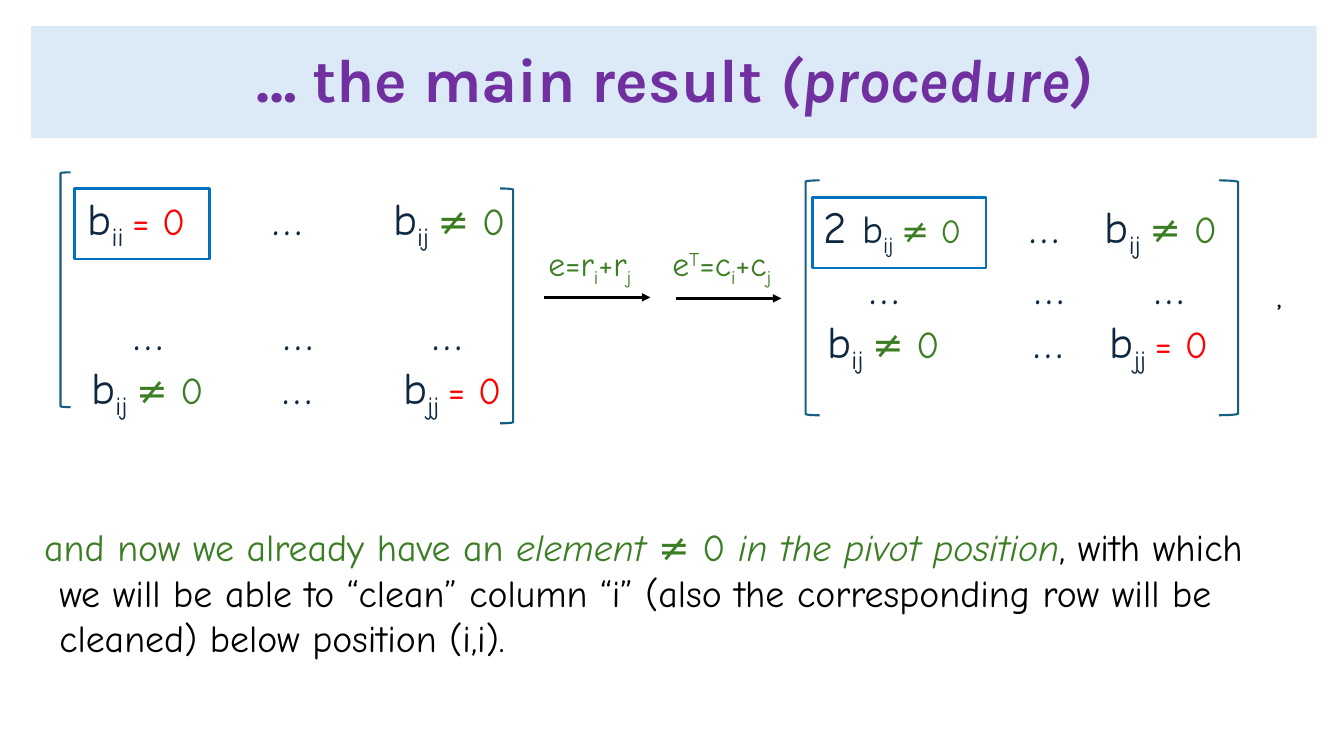
from lxml import etree
from pptx import Presentation
from pptx import util as u
from pptx.dml.color import RGBColor
from pptx.enum import shapes, text
from pptx.oxml import ns

EMU_PER_PX = 9144  # 100 px to the inch

BLACK = RGBColor(0x00, 0x00, 0x00)
PALE_BLUE = RGBColor(0xDC, 0xEA, 0xF7)
PURPLE = RGBColor(0x70, 0x30, 0xA0)
BLUE = RGBColor(0x00, 0x70, 0xC0)
TEAL = RGBColor(0x15, 0x60, 0x82)
NAVY = RGBColor(0x0E, 0x28, 0x41)
RED = RGBColor(0xFF, 0x00, 0x00)
GREEN = RGBColor(0x3B, 0x7D, 0x23)

HAND = "Comic Neue"
TITLE = "Karla"
SUB, SUPER = -25000, 30000
PARA_KEYS = ("alignment", "line_spacing", "space_before")


def px(value):
    return u.Emu(value * EMU_PER_PX)


def add_xml(parent, tag, **attributes):
    return etree.SubElement(parent, ns.qn(tag), attributes)


def run(words, size, color, base=0, name=HAND, **flags):
    """Describe one run of text as a dict of format values."""
    return dict(words=words, color=color, base=base,
                font=dict(size=u.Pt(size), name=name, **flags))


def entry(sub, relation, color, size=32, tail_size=27):
    """Describe a matrix entry: b with its index, then how it relates to 0."""
    return [run("b", size, NAVY), run(sub + " ", size, NAVY, SUB),
            run(relation + " 0", tail_size, color)]


def write_para(para, runs, tabs=(), indent=0, **layout):
    for key, value in layout.items():
        setattr(para, key, value)
    props = para._p.get_or_add_pPr()
    if indent:
        props.set("marL", str(px(indent)))
        props.set("indent", "0")
    if tabs:
        stops = add_xml(props, "a:tabLst")
        for stop in tabs:
            add_xml(stops, "a:tab", pos=str(px(stop)), algn="l")
    for item in runs:
        span = para.add_run()
        span.text = item["words"]
        for key, value in item["font"].items():
            setattr(span.font, key, value)
        span.font.color.rgb = item["color"]
        if item["base"]:
            span._r.get_or_add_rPr().set("baseline", str(item["base"]))


def add_text(page, left, top, width, height, paras, wrap=True):
    box = page.shapes.add_textbox(*map(px, (left, top, width, height)))
    frame = box.text_frame
    frame.word_wrap = wrap
    frame.auto_size = text.MSO_AUTO_SIZE.SHAPE_TO_FIT_TEXT
    for index, content in enumerate(paras):
        para = frame.add_paragraph() if index else frame.paragraphs[0]
        write_para(para, **content)


def add_outline(page, kind, color, width, *place):
    shape = page.shapes.add_shape(kind, *map(px, place))
    shape.shadow.inherit = False
    shape.fill.background()
    shape.line.color.rgb = color
    shape.line.width = u.Pt(width)


def add_brackets(page, left, right):
    for kind, place in ((shapes.MSO_SHAPE.LEFT_BRACKET, left),
                        (shapes.MSO_SHAPE.RIGHT_BRACKET, right)):
        add_outline(page, kind, TEAL, 1.5, *place)


def add_arrow(page, left, top, length):
    arrow = page.shapes.add_connector(
        shapes.MSO_CONNECTOR.STRAIGHT, *map(px, (left, top, left + length, top)))
    arrow.line.color.rgb = BLACK
    arrow.line.width = u.Pt(2)
    add_xml(arrow.line._get_or_add_ln(), "a:tailEnd", type="triangle")
    add_xml(arrow._element.spPr, "a:effectLst")


def add_title(page):
    banner = page.shapes.add_shape(
        shapes.MSO_SHAPE.RECTANGLE, *map(px, (31, 26, 1275, 111)))
    banner.shadow.inherit = False
    banner.fill.solid()
    banner.fill.fore_color.rgb = PALE_BLUE
    banner.line.fill.background()
    banner.text_frame.vertical_anchor = text.MSO_ANCHOR.MIDDLE
    write_para(banner.text_frame.paragraphs[0],
               [run("… the main result ", 44, PURPLE, name=TITLE, bold=True),
                run("(procedure)", 44, PURPLE, name=TITLE, bold=True, italic=True)],
               alignment=text.PP_ALIGN.CENTER, line_spacing=0.9)


def add_matrix(page, place, pivot, tabs, corner, gap=0):
    """Write the three rows; tabs holds the column stops of each row."""
    dots, skip = run("\t…", 32, NAVY), run("\t", 32, NAVY)
    rows = [
        [run(" ", 24, BLUE), *pivot, dots, skip, *entry("ij", "≠", GREEN)],
        [dots] * 3,
        [run(" ", 32, NAVY), *entry("ij", "≠", GREEN), dots, skip, *corner],
    ]
    paras = [dict(runs=runs, tabs=stops) for runs, stops in zip(rows, tabs)]
    if gap:
        paras[1]["space_before"] = u.Pt(gap)
    add_text(page, *place, paras)


def add_step(page, place, parts, arrow_left, arrow_top):
    """Label an elementary operation above its arrow."""
    runs = [run(words, 24, GREEN, base) for words, base in parts]
    add_text(page, *place, [dict(runs=runs)])
    add_arrow(page, arrow_left, arrow_top, 105)


def add_conclusion(page):
    first = [run("and now we already have an ", 27, GREEN),
             run("element ", 27, GREEN, italic=True),
             run("≠ 0 ", 27, GREEN),
             run("in the pivot position", 27, GREEN, italic=True),
             run(", with which", 27, BLACK)]
    others = ("we will be able to “clean” column “i” (also the corresponding row will be",
              "cleaned) below position (i,i).")
    add_text(page, 0, 515, 1333, 148, [
        dict(runs=first, indent=34),
        *(dict(runs=[run(line, 27, BLACK)], indent=49) for line in others)])


def main():
    deck = Presentation()
    deck.slide_width, deck.slide_height = px(1333), px(750)
    page = deck.slides.add_slide(deck.slide_layouts[6])
    corner = entry("jj", "=", RED)

    add_title(page)

    add_matrix(page, (66, 184, 462, 172), entry("ii", "=", RED),
               ((194, 314), (57, 205, 353), (204, 324)), corner, gap=38.5)
    add_outline(page, shapes.MSO_SHAPE.RECTANGLE, BLUE, 2, 74, 187, 134, 70)
    add_brackets(page, (60, 171, 10, 233), (496, 187, 13, 233))

    add_step(page, (534, 236, 130, 50),
             (("e=r", 0), ("i", SUB), ("+r", 0), ("j", SUB)), 540, 295)
    add_step(page, (657, 236, 148, 50),
             (("e", 0), ("T", SUPER), ("=c", 0), ("i", SUB), ("+c", 0), ("j", SUB)),
             670, 296)

    doubled = [run("2 ", 32, NAVY), *entry("ij", "≠", GREEN, 28, 24)]
    add_matrix(page, (796, 192, 500, 172), doubled,
               ((215, 290), (57, 220, 339), (219, 295)), corner)
    add_outline(page, shapes.MSO_SHAPE.RECTANGLE, BLUE, 2, 806, 196, 172, 70)
    add_brackets(page, (799, 179, 14, 233), (1209, 179, 19, 233))
    add_text(page, 1256, 275, 35, 40,
             [dict(runs=[run(",", 18, BLACK, name=TITLE)])], wrap=False)

    add_conclusion(page)
    deck.save("out.pptx")


if __name__ == "__main__":
    main()
